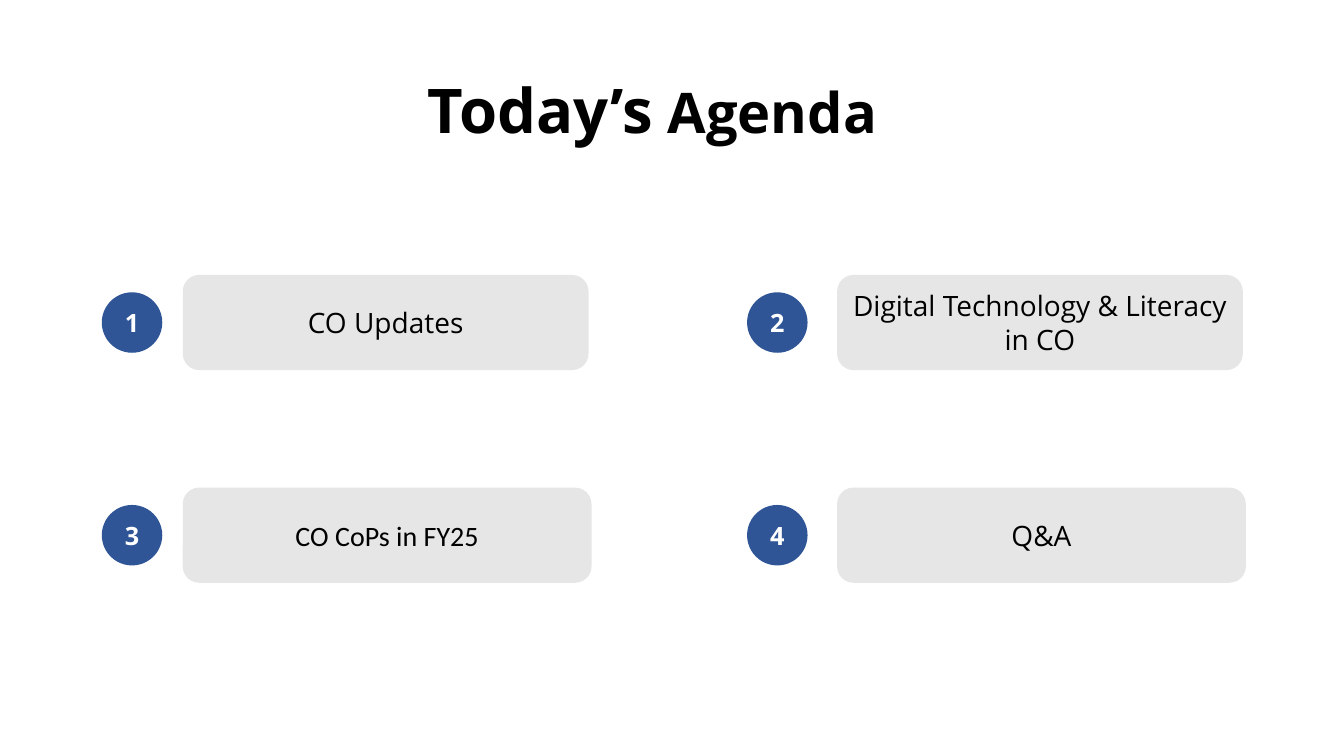
from pptx import Presentation, util as u
from pptx.dml.color import RGBColor
from pptx.enum import shapes, text

# Content
TITLE = [("Today’s", 44), (" Agenda", 40)]
AGENDA = [
    ("CO Updates", "Open Sans"),
    ("Digital Technology & Literacy in CO", "Open Sans"),
    ("CO CoPs in FY25", "Calibri"),
    ("Q&A", "Open Sans"),
]

# Colours
BLACK = RGBColor(0x00, 0x00, 0x00)
WHITE = RGBColor(0xFF, 0xFF, 0xFF)
BLUE = RGBColor(0x2F, 0x55, 0x97)
GREY = RGBColor(0xE7, 0xE6, 0xE6)

# Grid in inches: two columns, two rows
BADGE_LEFTS = (1.01, 7.41)
BAR_LEFTS = (1.82, 8.31)
BAR_WIDTHS = (4.01, 4.04)  # one per row
BADGE_SIZE, BAR_HEIGHT = 0.6, 0.93
ROW_MIDDLE, ROW_STEP = 3.2, 2.11


def style_span(span, size, color, font="Open Sans", bold=False):
    span.font.size = u.Pt(size)
    span.font.name = font
    span.font.bold = bold
    span.font.color.rgb = color


def add_label(kind, left, middle, width, height, fill, words):
    """Add a filled shape, centred on a row, and return its run of text."""
    shape = page.shapes.add_shape(
        kind, u.Inches(left), u.Inches(middle - height / 2),
        u.Inches(width), u.Inches(height))
    shape.shadow.inherit = False
    shape.fill.solid()
    shape.fill.fore_color.rgb = fill
    shape.line.color.rgb = fill
    shape.line.width = u.Pt(1)
    frame = shape.text_frame
    frame.text = words
    frame.vertical_anchor = text.MSO_ANCHOR.MIDDLE
    para = frame.paragraphs[0]
    para.alignment = text.PP_ALIGN.CENTER
    return shape, para.runs[0]


deck = Presentation()
deck.slide_width, deck.slide_height = u.Inches(13.33), u.Inches(7.5)
page = deck.slides.add_slide(deck.slide_layouts[6])

# Title
box = page.shapes.add_textbox(
    u.Inches(2.83), u.Inches(0.66), u.Inches(7.28), u.Inches(0.84))
box.text_frame.word_wrap = True
box.text_frame.auto_size = text.MSO_AUTO_SIZE.SHAPE_TO_FIT_TEXT
para = box.text_frame.paragraphs[0]
para.alignment = text.PP_ALIGN.CENTER
for words, size in TITLE:
    span = para.add_run()
    span.text = words
    style_span(span, size, BLACK, bold=True)

# Numbered agenda items
for index, (topic, font) in enumerate(AGENDA):
    row, column = divmod(index, 2)
    middle = ROW_MIDDLE + row * ROW_STEP

    badge, span = add_label(
        shapes.MSO_SHAPE.OVAL, BADGE_LEFTS[column], middle,
        BADGE_SIZE, BADGE_SIZE, BLUE, str(index + 1))
    badge.line.fill.background()
    style_span(span, 18, WHITE, bold=True)

    bar, span = add_label(
        shapes.MSO_SHAPE.ROUNDED_RECTANGLE, BAR_LEFTS[column], middle,
        BAR_WIDTHS[row], BAR_HEIGHT, GREY, topic)
    style_span(span, 20, BLACK, font)

deck.save("out.pptx")
